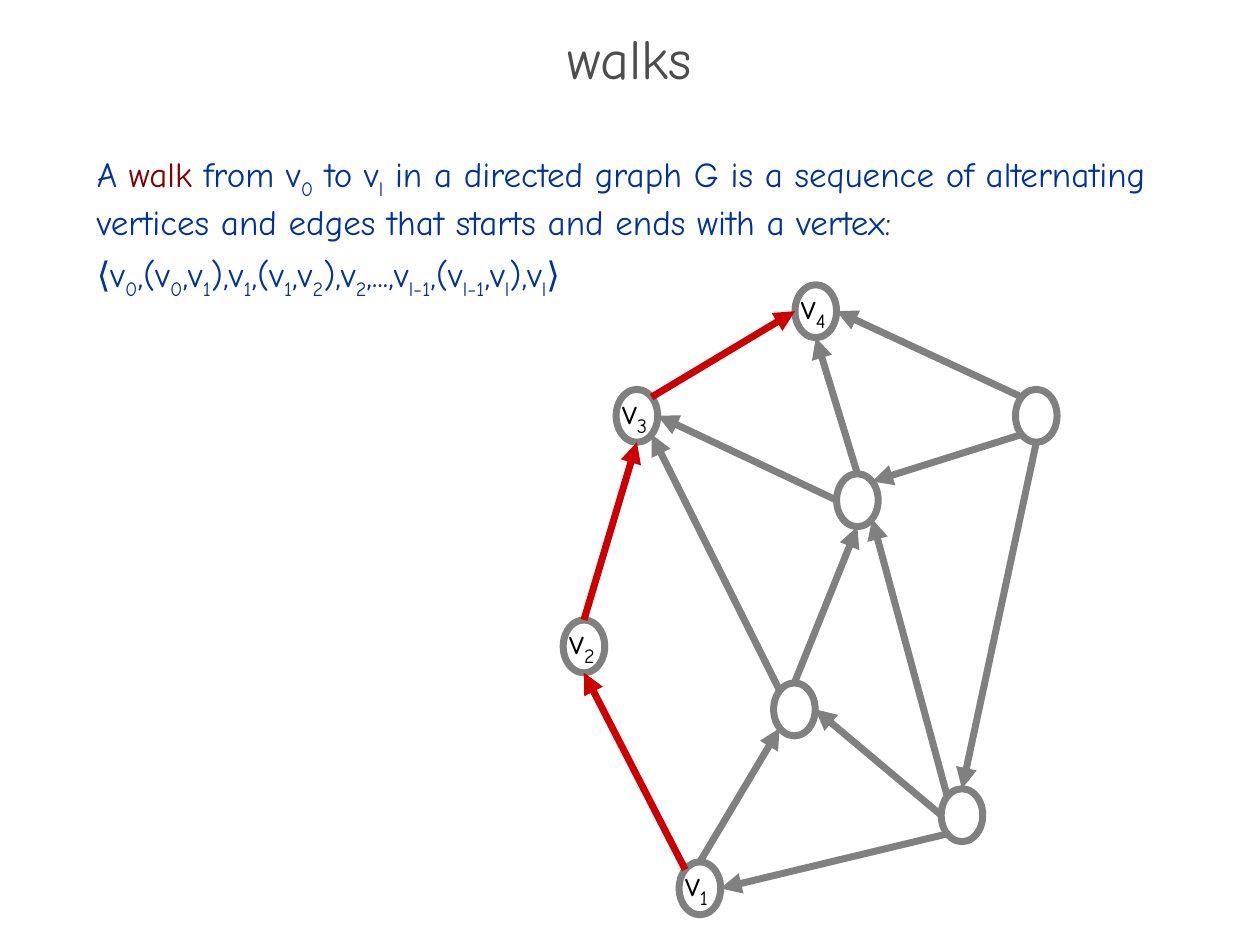
"""Builds a slide that defines walks in a directed graph and marks one walk."""
from math import cos, radians, sin

from lxml.etree import SubElement
from pptx import Presentation
from pptx.dml.color import RGBColor
from pptx.enum.shapes import MSO_CONNECTOR, MSO_SHAPE
from pptx.enum.text import MSO_ANCHOR, PP_ALIGN
from pptx.oxml.ns import qn
from pptx.util import Inches, Pt

FONT = "Comic Neue"
WHITE = RGBColor(0xFF, 0xFF, 0xFF)
BLACK = RGBColor(0x00, 0x00, 0x00)
CHARCOAL = RGBColor(0x4D, 0x4D, 0x4D)
GRAY = RGBColor(0x80, 0x80, 0x80)
BLUE = RGBColor(0x00, 0x33, 0x99)
MAROON = RGBColor(0x80, 0x00, 0x00)
RED = RGBColor(0xCC, 0x00, 0x00)

NODE_WIDTH, NODE_HEIGHT = 0.33, 0.42
NODES = {
    "v1": (5.39, 6.84),
    "v2": (4.47, 4.92),
    "v3": (4.89, 3.09),
    "v4": (6.31, 2.26),
    "center": (6.64, 3.76),
    "lower": (6.14, 5.42),
    "right": (8.06, 3.09),
    "corner": (7.47, 6.26),
}
ANGLES = {"E": 0, "SE": 45, "S": 90, "SW": 135, "W": 180, "NW": 225, "N": 270, "NE": 315}
WALK = [
    ("v1", "NW", "v2", "S"),
    ("v2", "N", "v3", "S"),
    ("v3", "NE", "v4", "W"),
]
OTHER_EDGES = [
    ("corner", "SW", "v1", "E"),
    ("right", "NW", "v4", "E"),
    ("center", "N", "v4", "S"),
    ("center", "W", "v3", "E"),
    ("lower", "NW", "v3", "SE"),
    ("lower", "N", "center", "S"),
    ("v1", "N", "lower", "SW"),
    ("right", "SW", "center", "NE"),
    ("corner", "W", "lower", "E"),
    ("right", "S", "corner", "N"),
    ("corner", "NW", "center", "SE"),
]
DEFINITION = [
    "A *walk* from v_0_ to v_l_ in a directed graph G is a sequence of alternating "
    "vertices and edges that starts and ends with a vertex:",
    "⟨v_0_,(v_0_,v_1_),v_1_,(v_1_,v_2_),v_2_,...,v_l−1_,(v_l−1_,v_l_),v_l_⟩",
]


def add_spans(para, text, size, color):
    for index, piece in enumerate(text.split("_")):
        for part, words in enumerate(piece.split("*")):
            span = para.add_run()
            span.text = words
            span.font.name = FONT
            span.font.size = Pt(size)
            span.font.color.rgb = MAROON if part == 1 else color
            if index % 2:
                span.font._element.set("baseline", "-25000")


def rim_point(node, side):
    left, top = NODES[node]
    angle = radians(ANGLES[side])
    return (Inches(left + NODE_WIDTH / 2 * (1 + cos(angle))),
            Inches(top + NODE_HEIGHT / 2 * (1 + sin(angle))))


deck = Presentation()
deck.slide_width, deck.slide_height = Inches(10), Inches(7.5)
page = deck.slides.add_slide(deck.slide_layouts[6])

title = page.shapes.add_textbox(Inches(0), Inches(0.27), Inches(10), Inches(0.5))
title.text_frame.word_wrap = True
title.text_frame.vertical_anchor = MSO_ANCHOR.MIDDLE
para = title.text_frame.paragraphs[0]
para.alignment = PP_ALIGN.CENTER
para.line_spacing = 0.7
add_spans(para, "walks", 32, CHARCOAL)

body = page.shapes.add_textbox(Inches(0.67), Inches(1.16), Inches(8.58), Inches(5.92))
body.text_frame.word_wrap = True
for number, text in enumerate(DEFINITION):
    para = body.text_frame.add_paragraph() if number else body.text_frame.paragraphs[0]
    para.space_after = Pt(6)
    add_spans(para, text, 20, BLUE)

for left, top in NODES.values():
    node = page.shapes.add_shape(MSO_SHAPE.OVAL, Inches(left), Inches(top),
                                 Inches(NODE_WIDTH), Inches(NODE_HEIGHT))
    node.shadow.inherit = False
    node.fill.solid()
    node.fill.fore_color.rgb = WHITE
    node.line.color.rgb = GRAY
    node.line.width = Pt(4)

for edges, color in ((WALK, RED), (OTHER_EDGES, GRAY)):
    for source, exit_side, target, entry_side in edges:
        edge = page.shapes.add_connector(MSO_CONNECTOR.STRAIGHT,
                                         *rim_point(source, exit_side),
                                         *rim_point(target, entry_side))
        edge.line.color.rgb = color
        edge.line.width = Pt(4)
        SubElement(edge.line._get_or_add_ln(), qn("a:tailEnd"), type="triangle")
        SubElement(edge._element.spPr, qn("a:effectLst"))

for number in range(1, 5):
    left, top = NODES[f"v{number}"]
    label = page.shapes.add_textbox(Inches(left - 0.05), Inches(top - 0.05),
                                    Inches(0.45), Inches(0.44))
    label.text_frame.word_wrap = False
    add_spans(label.text_frame.paragraphs[0], f"v_{number}", 20, BLACK)

deck.save("out.pptx")
